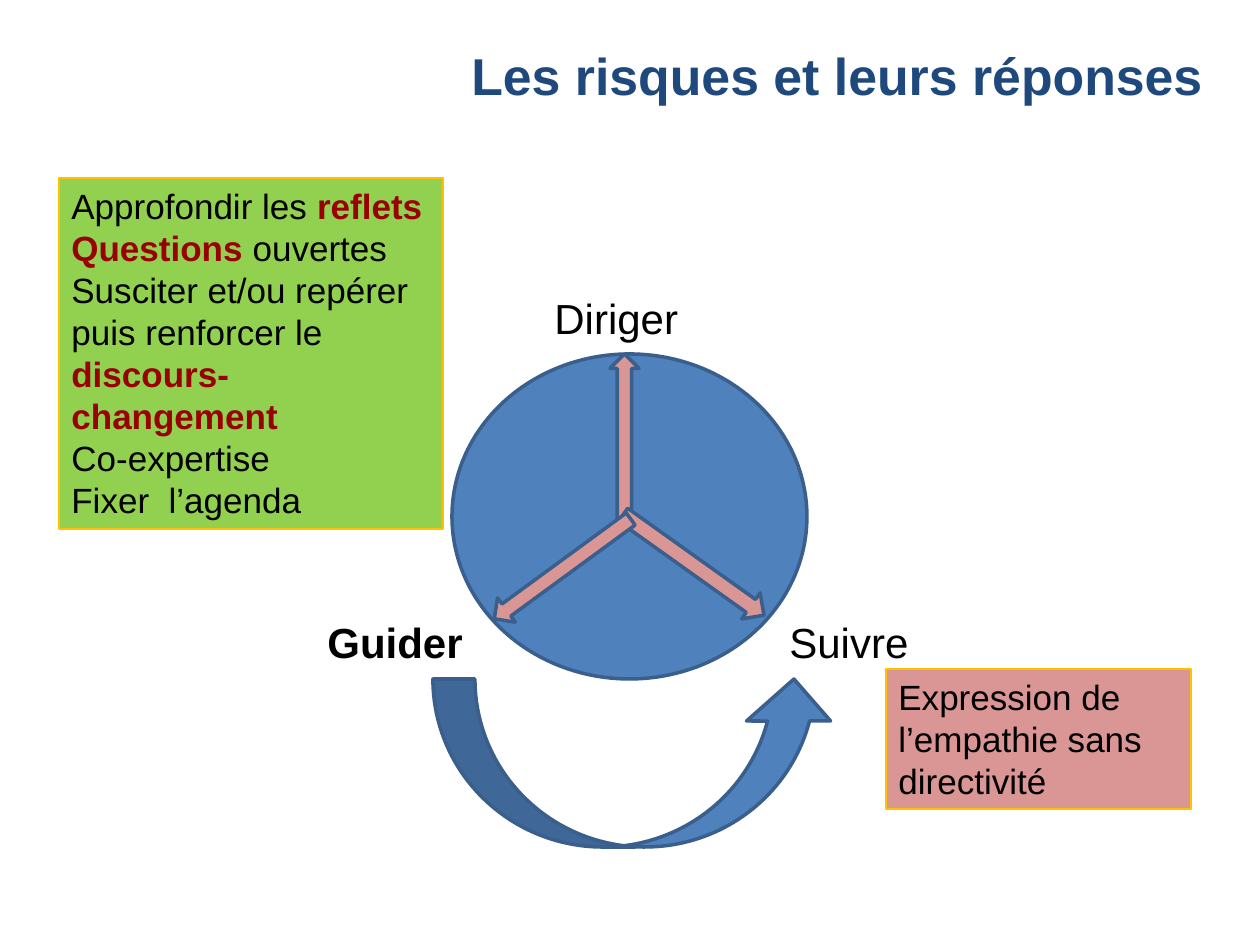
"""Build the slide on the risks and their answers: guide, direct, follow."""
import pptx
import pptx.dml.color
import pptx.enum.shapes
import pptx.enum.text
import pptx.util

PX = 914400 / 126
THEME = {
    "font": "Arial", "black": "000000", "accent": "990000", "title": "1F497D",
    "blue": "4F81BD", "edge": "3A5F8C", "pink": "D99694", "green": "92D050", "gold": "FFC000",
    "title_size": 29.6, "label_size": 24, "note_size": 20, "edge_width": 2, "note_width": 0.75,
}
SHAPE = pptx.enum.shapes.MSO_SHAPE
ANCHOR = pptx.enum.text.MSO_ANCHOR
ALIGN = pptx.enum.text.PP_ALIGN

prs = pptx.Presentation()
prs.slide_width, prs.slide_height = round(1260 * PX), round(945 * PX)
s = prs.slides.add_slide(prs.slide_layouts[6])


def add_shape(kind, box, fill, line, width):
    sp = s.shapes.add_shape(kind, *[round(v * PX) for v in box])
    sp.shadow.inherit = False
    sp.fill.solid()
    sp.fill.fore_color.rgb = pptx.dml.color.RGBColor.from_string(THEME[fill])
    sp.line.color.rgb = pptx.dml.color.RGBColor.from_string(THEME[line])
    sp.line.width = pptx.util.Pt(THEME[width])
    return sp


def write(sp, paragraphs, size, anchor=ANCHOR.TOP, **para_format):
    tf = sp.text_frame
    tf.word_wrap = True
    tf.vertical_anchor = anchor
    for i, runs in enumerate(paragraphs):
        p = tf.add_paragraph() if i else tf.paragraphs[0]
        for name, value in {"alignment": ALIGN.LEFT, **para_format}.items():
            setattr(p, name, value)
        for text, color, bold in runs:
            r = p.add_run()
            r.text = text
            font = {"name": THEME["font"], "size": pptx.util.Pt(THEME[size]), "bold": bold}
            for name, value in font.items():
                setattr(r.font, name, value)
            r.font.color.rgb = pptx.dml.color.RGBColor.from_string(THEME[color])


parts = [
    (SHAPE.FLOWCHART_CONNECTOR, (452, 354, 355, 325), "blue", 0, False),
    (SHAPE.UP_ARROW, (610, 354, 29, 168), "pink", 0, False),
    (SHAPE.RIGHT_ARROW, (607, 549, 173, 32), "pink", 35.5, False),
    (SHAPE.RIGHT_ARROW, (478, 554, 169, 30), "pink", 323.8, True),
    (SHAPE.CURVED_UP_ARROW, (433, 679, 403, 168), "blue", 0, False),
]
for kind, box, fill, angle, flipped in parts:
    sp = add_shape(kind, box, fill, "edge", "edge_width")
    sp.rotation = angle
    if flipped:
        sp._element.spPr.xfrm.set("flipH", "1")

labels = [("Diriger", 542, 286, False), ("Guider", 315, 610, True), ("Suivre", 777, 610, False)]
for text, x, y, bold in labels:
    sp = s.shapes.add_textbox(*[round(v * PX) for v in (x, y, 168, 64)])
    write(sp, [[(text, "black", bold)]], "label_size")

notes = [
    ((886, 669, 305, 140), "pink", [[("Expression de l’empathie sans directivité", "black", False)]]),
    ((59, 178, 384, 351), "green", [
        [("Approfondir les ", "black", False), ("reflets", "accent", True)],
        [("Questions ", "accent", True), ("ouvertes", "black", False)],
        [("Susciter et/ou repérer puis renforcer le ", "black", False),
         ("discours-changement", "accent", True)],
        [("Co-expertise", "black", False)],
        [("Fixer  l’agenda", "black", False)],
    ]),
]
for box, fill, paragraphs in notes:
    sp = add_shape(SHAPE.RECTANGLE, box, fill, "gold", "note_width")
    write(sp, paragraphs, "note_size")

sp = s.shapes.add_textbox(*[round(v * PX) for v in (440, 35, 795, 78)])
write(sp, [[("Les risques et leurs réponses", "title", True)]], "title_size",
      ANCHOR.BOTTOM, alignment=ALIGN.CENTER, line_spacing=0.9)

prs.save("out.pptx")
